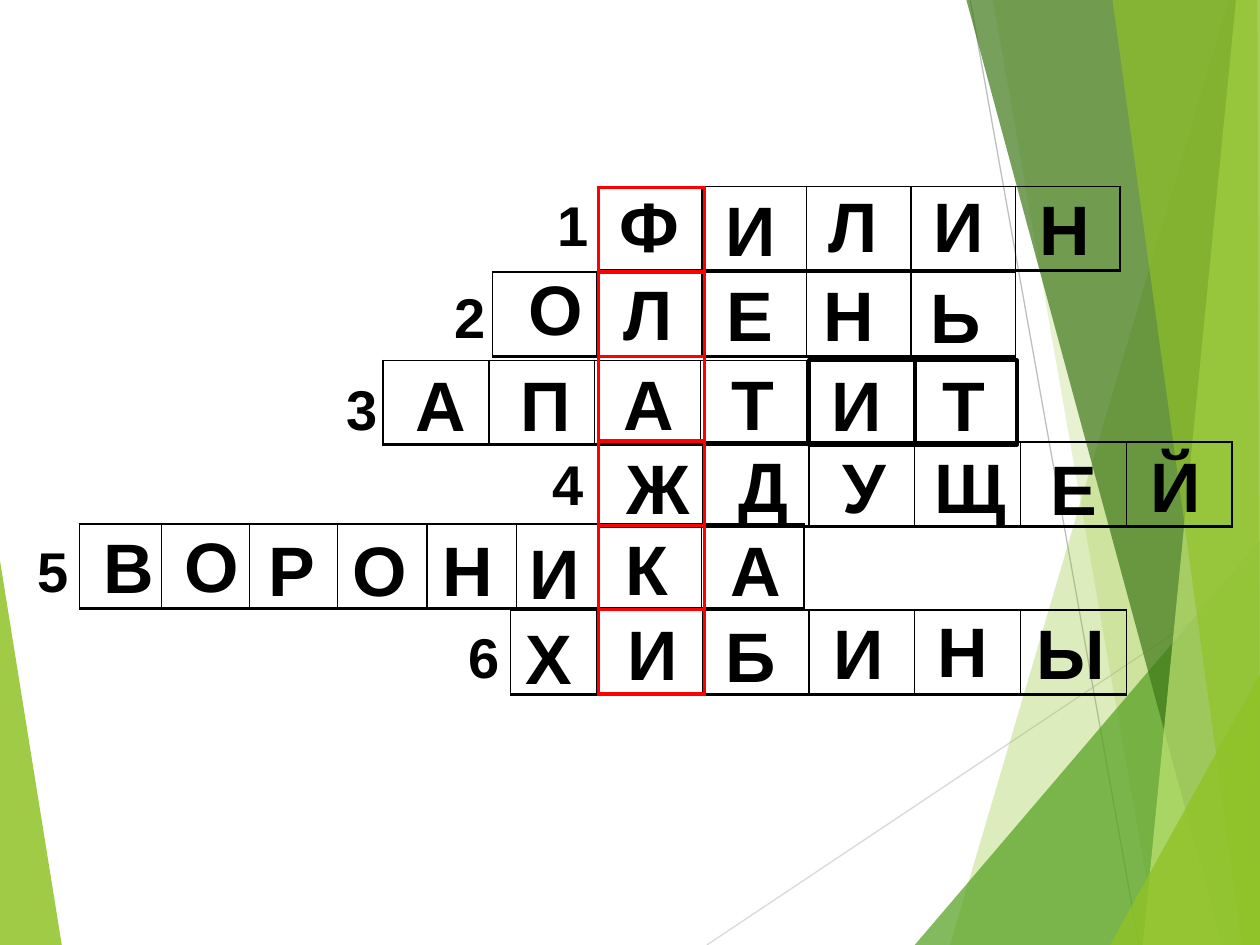
from lxml.etree import SubElement
from pptx import Presentation
from pptx.dml.color import RGBColor
from pptx.enum.shapes import MSO_CONNECTOR, MSO_SHAPE
from pptx.enum.text import MSO_AUTO_SIZE
from pptx.oxml.ns import qn
from pptx.util import Inches, Pt

FONT = "Arial"
CELL = 0.67
BLACK, RED = "000000", "FF0000"
# Box width of each letter, where it is not 0.61
WIDE = {"Ф": 0.68, "О": 0.64, "Л": 0.6, "Е": 0.58, "Р": 0.58, "Х": 0.58, "У": 0.55,
        "Щ": 0.77, "Ы": 0.75, "Т": 0.54, "К": 0.54, "Ж": 0.71, "Д": 0.6}

# Facets: colour, opacity in percent, corners
FACETS = [
    ("90C226", 85, [(0, 4.45), (0.49, 7.5), (0, 7.5)]),
    ("90C226", 30, [(9.75, 0), (7.54, 7.5), (10, 7.5), (10, 0)]),
    ("90C226", 20, [(7.88, 0), (9.19, 7.5), (10, 7.5), (10, 0)]),
    ("54A021", 72, [(7.26, 7.5), (10, 4.29), (10, 7.5)]),
    ("3F7819", 70, [(7.67, 0), (9.7, 7.5), (10, 7.5), (10, 0)]),
    ("C0E474", 70, [(9.81, 0), (9.07, 7.5), (10, 7.5), (10, 0)]),
    ("90C226", 65, [(8.83, 0), (9.86, 7.5), (10, 7.5), (9.98, 0)]),
    ("90C226", 80, [(8.81, 7.5), (10, 5.35), (10, 7.5)]),
]
RAYS = [("D9D9D9", 5.61, 7.5, 10, 4.57), ("BFBFBF", 7.7, 0, 9.04, 7.5)]

# Rows: left, top, column widths, offset of the number, word,
# then the offset of each letter from the row's corner
ROWS = [
    (4.74, 1.48, [0.83] * 5, (-0.41, -0.02), "ФИЛИН",
     [(0.08, -0.08), (0.92, -0.05), (1.74, -0.08), (2.57, -0.08), (3.41, -0.06)]),
    (3.91, 2.16, [0.83] * 5, (-0.4, 0.03), "ОЛЕНЬ",
     [(0.19, -0.1), (0.94, -0.06), (1.76, -0.05), (2.53, -0.05), (3.38, -0.04)]),
    (3.04, 2.86, [0.84] * 4, (-0.39, 0.06), "АПАТИТ",
     [(0.16, -0.04), (0.99, -0.04), (1.81, -0.05), (2.67, -0.05), (3.46, -0.04),
      (4.34, -0.04)]),
    (4.74, 3.51, [0.84] * 6, (-0.45, 0.01), "ЖДУЩЕЙ",
     [(0.13, -0.03), (1.02, -0.05), (1.85, -0.04), (2.58, -0.04), (3.5, -0.02),
      (4.29, -0.05)]),
    (0.63, 4.16, [0.65, 0.7, 0.7, 0.71, 0.71, 0.66, 0.81, 0.81], (-0.43, 0.05), "ВОРОНИКА",
     [(0.09, -0.05), (0.74, -0.06), (1.4, -0.03), (2.07, -0.03), (2.78, -0.03),
      (3.47, -0.01), (4.24, -0.04), (5.07, -0.03)]),
    (4.05, 4.84, [0.69] + [0.84] * 5, (-0.43, 0.05), "ХИБИНЫ",
     [(0.02, -0.01), (0.83, -0.04), (1.61, -0.03), (2.47, -0.05), (3.29, -0.07),
      (4.08, -0.05)]),
]


def color(code):
    return RGBColor.from_string(code)


def facet(slide, code, alpha, spots):
    first, *rest = [(Inches(x), Inches(y)) for x, y in spots]
    pen = slide.shapes.build_freeform(*first)
    pen.add_line_segments(rest, close=True)
    shape = pen.convert_to_shape()
    shape.shadow.inherit = False
    shape.line.fill.background()
    shape.fill.solid()
    shape.fill.fore_color.rgb = color(code)
    tint = shape.fill._xPr.find(".//" + qn("a:srgbClr"))
    SubElement(tint, qn("a:alpha"), val=str(alpha * 1000))


def ray(slide, code, *ends):
    line = slide.shapes.add_connector(MSO_CONNECTOR.STRAIGHT, *map(Inches, ends))
    line.line.color.rgb = color(code)
    line.line.width = Pt(0.75)
    SubElement(line._element.spPr, qn("a:effectLst"))


def backdrop(slide):
    facet(slide, *FACETS[0])
    for item in RAYS:
        ray(slide, *item)
    for item in FACETS[1:]:
        facet(slide, *item)


def border(cell, code, sizes):
    cell.fill.background()
    props = cell._tc.get_or_add_tcPr()
    for place, (side, size) in enumerate(zip("LRTB", sizes)):
        line = props.makeelement(qn("a:ln" + side), {"w": str(Pt(size))})
        fill = SubElement(line, qn("a:solidFill"))
        SubElement(fill, qn("a:srgbClr"), val=code)
        props.insert(place, line)


def grid(slide, left, top, cols, count, code, sizes):
    box = map(Inches, (left, top, sum(cols), CELL * count))
    table = slide.shapes.add_table(count, len(cols), *box).table
    table.first_row = table.horz_banding = False
    for col, width in zip(table.columns, cols):
        col.width = Inches(width)
    for row in table.rows:
        row.height = Inches(CELL)
    for cell in table.iter_cells():
        border(cell, code, sizes)


def frame(slide, left, top, width):
    shape = slide.shapes.add_shape(
        MSO_SHAPE.RECTANGLE, Inches(left), Inches(top), Inches(width), Inches(CELL))
    shape.shadow.inherit = False
    shape.fill.background()
    shape.line.color.rgb = color(BLACK)
    shape.line.width = Pt(2.25)


def label(slide, text, left, top, width, height, size):
    box = slide.shapes.add_textbox(*map(Inches, (left, top, width, height)))
    box.text_frame.word_wrap = False
    box.text_frame.auto_size = MSO_AUTO_SIZE.SHAPE_TO_FIT_TEXT
    run = box.text_frame.paragraphs[0].add_run()
    run.text = text
    run.font.name = FONT
    run.font.size = Pt(size)
    run.font.bold = True
    run.font.color.rgb = color(BLACK)


def answer(slide, number, left, top, shift, word, spots):
    label(slide, str(number), left + shift[0], top + shift[1], 0.45, 0.64, 32)
    for char, (dx, dy) in zip(word, spots):
        label(slide, char, left + dx, top + dy, WIDE.get(char, 0.61), 0.77, 40)


def puzzle(slide):
    # Word rows
    for left, top, cols, *_ in ROWS:
        grid(slide, left, top, cols, 1, BLACK, (1, 1, 1, 2))
    # Key word column
    grid(slide, 4.75, 1.49, [0.84], len(ROWS), RED, [2.25] * 4)
    # Last two cells of the third row
    frame(slide, 6.42, 2.86, 0.84)
    frame(slide, 7.26, 2.86, 0.81)
    # Numbers and letters
    for number, (left, top, _, *rest) in enumerate(ROWS, 1):
        answer(slide, number, left, top, *rest)


def main():
    deck = Presentation()
    deck.slide_width, deck.slide_height = Inches(10), Inches(7.5)
    slide = deck.slides.add_slide(deck.slide_layouts[6])
    backdrop(slide)
    puzzle(slide)
    deck.save("out.pptx")


if __name__ == "__main__":
    main()
